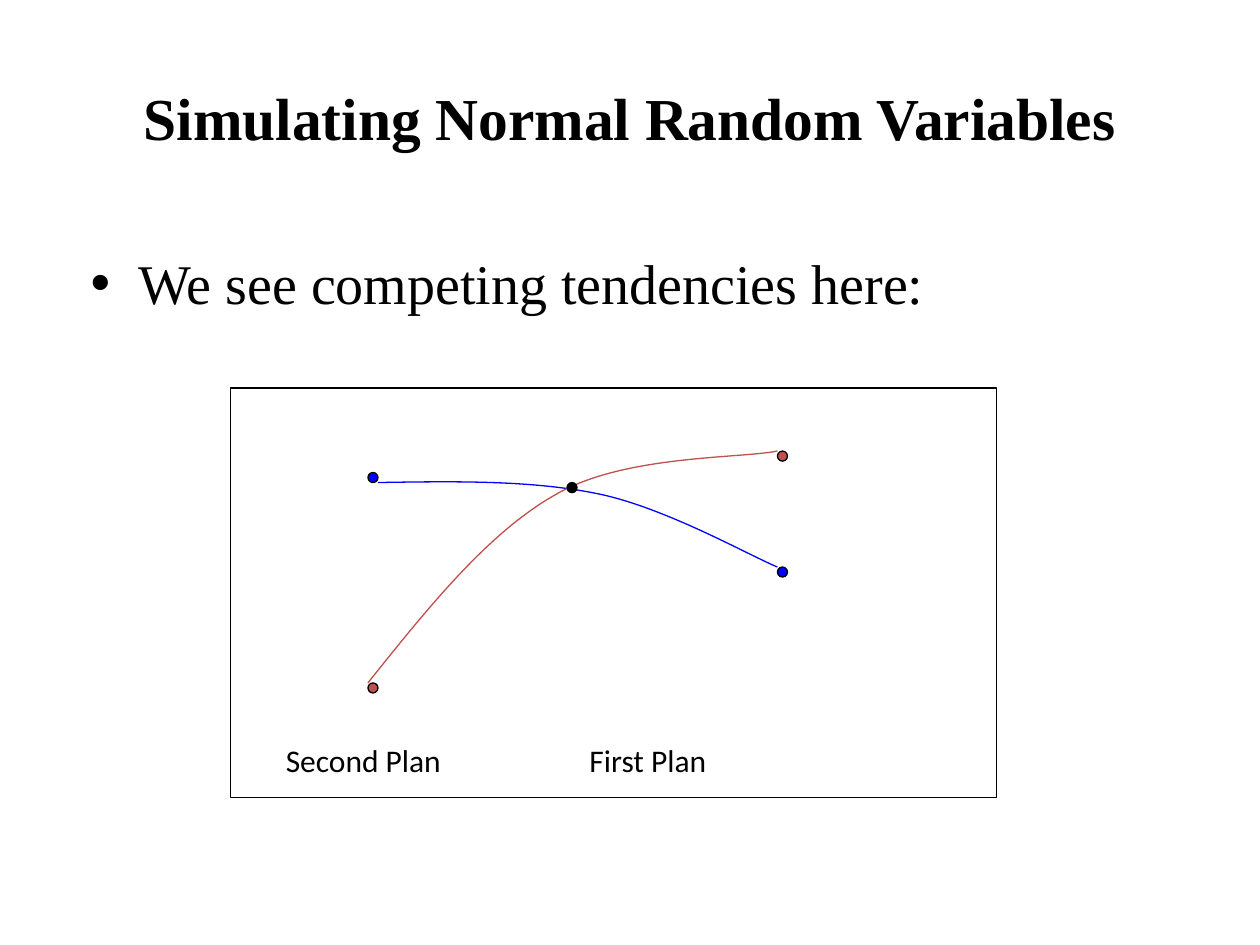
"""Build a slide on competing tendencies of two plans."""
from lxml import etree
from pptx import Presentation
from pptx.dml.color import RGBColor
from pptx.enum.shapes import MSO_SHAPE
from pptx.enum.text import MSO_ANCHOR, PP_ALIGN
from pptx.oxml.ns import qn
from pptx.util import Inches, Pt

RECT, OVAL = MSO_SHAPE.RECTANGLE, MSO_SHAPE.OVAL
TOP, MIDDLE = MSO_ANCHOR.TOP, MSO_ANCHOR.MIDDLE
LEFT, CENTER = PP_ALIGN.LEFT, PP_ALIGN.CENTER

COLORS = {"black": "000000", "white": "FFFFFF", "blue": "0000FF", "red": "C0504D"}
SERIF = "Times New Roman"
TEXTS = {
    "title": ("Simulating Normal Random Variables", (0.5, 0.3, 9, 1.25), MIDDLE, CENTER,
              {"size": Pt(34), "name": SERIF, "bold": True}),
    "point": ("We see competing tendencies here:", (0.62, 1.92, 8.75, 0.75), TOP, LEFT,
              {"size": Pt(32), "name": SERIF}),
    "plans": ("Second Plan\tFirst Plan", (2.17, 5.83, 4.76, 0.4), TOP, LEFT,
              {"size": Pt(18), "name": "Calibri"}),
}
FRAME = (1.83, 3.08, 6.08, 3.25)
DOT = 0.08
ENDS = [("blue", 2.92, 3.75), ("red", 2.92, 5.42), ("blue", 6.17, 4.5), ("red", 6.17, 3.58)]
CROSS = ("black", 4.5, 3.83)
CURVES = {
    "blue": [(3, 3.83), (3.61, 3.82), (4.22, 3.81), (4.75, 3.92),
             (5.28, 4.03), (5.93, 4.4), (6.17, 4.5)],
    "red": [(2.92, 5.42), (3.4, 4.82), (3.88, 4.22), (4.42, 3.92),
            (4.96, 3.61), (5.88, 3.64), (6.17, 3.58)],
}


def rgb(name):
    return RGBColor.from_string(COLORS[name])


def outline(shape, color):
    shape.shadow.inherit = False
    shape.line.color.rgb = rgb(color)
    shape.line.width = Pt(0.75)


def add_text(slide, text, box, anchor, align, font):
    frame = slide.shapes.add_textbox(*map(Inches, box)).text_frame
    frame.word_wrap = True
    frame.vertical_anchor = anchor
    para = frame.paragraphs[0]
    para.alignment = align
    run = para.add_run()
    run.text = text
    run.font.color.rgb = rgb("black")
    for key, value in font.items():
        setattr(run.font, key, value)
    return para._p.get_or_add_pPr()


def add_bullet(props):
    props.set("marL", str(Inches(0.38)))
    props.set("indent", str(-Inches(0.38)))
    space = etree.SubElement(props, qn("a:spcBef"))
    etree.SubElement(space, qn("a:spcPct"), val="20000")
    etree.SubElement(props, qn("a:buFont"), typeface="Arial")
    etree.SubElement(props, qn("a:buChar"), char="•")


def add_tab(props, pos):
    tabs = etree.SubElement(props, qn("a:tabLst"))
    etree.SubElement(tabs, qn("a:tab"), pos=str(Inches(pos)), algn="l")


def add_shape(slide, kind, box, fill):
    shape = slide.shapes.add_shape(kind, *map(Inches, box))
    shape.fill.solid()
    shape.fill.fore_color.rgb = rgb(fill)
    outline(shape, "black")


def add_dot(slide, color, left, top):
    add_shape(slide, OVAL, (left, top, DOT, DOT), color)


def add_curve(slide, color, points):
    start, *rest = [(Inches(x), Inches(y)) for x, y in points]
    build = slide.shapes.build_freeform(*start, scale=1)
    build.add_line_segments(rest, close=False)
    shape = build.convert_to_shape()
    shape.fill.background()
    outline(shape, color)
    track = shape.element.find(".//" + qn("a:path"))
    lines = track.findall(qn("a:lnTo"))
    for first in range(0, len(lines), 3):
        bend = etree.SubElement(track, qn("a:cubicBezTo"))
        for line in lines[first:first + 3]:
            bend.append(line[0])
            track.remove(line)


def main():
    deck = Presentation()
    deck.slide_width, deck.slide_height = Inches(10), Inches(7.5)
    slide = deck.slides.add_slide(deck.slide_layouts[6])
    add_text(slide, *TEXTS["title"])
    add_bullet(add_text(slide, *TEXTS["point"]))
    add_shape(slide, RECT, FRAME, "white")
    for end in ENDS:
        add_dot(slide, *end)
    add_tab(add_text(slide, *TEXTS["plans"]), 2.41)
    for color, points in CURVES.items():
        add_curve(slide, color, points)
    add_dot(slide, *CROSS)
    deck.save("out.pptx")


if __name__ == "__main__":
    main()
